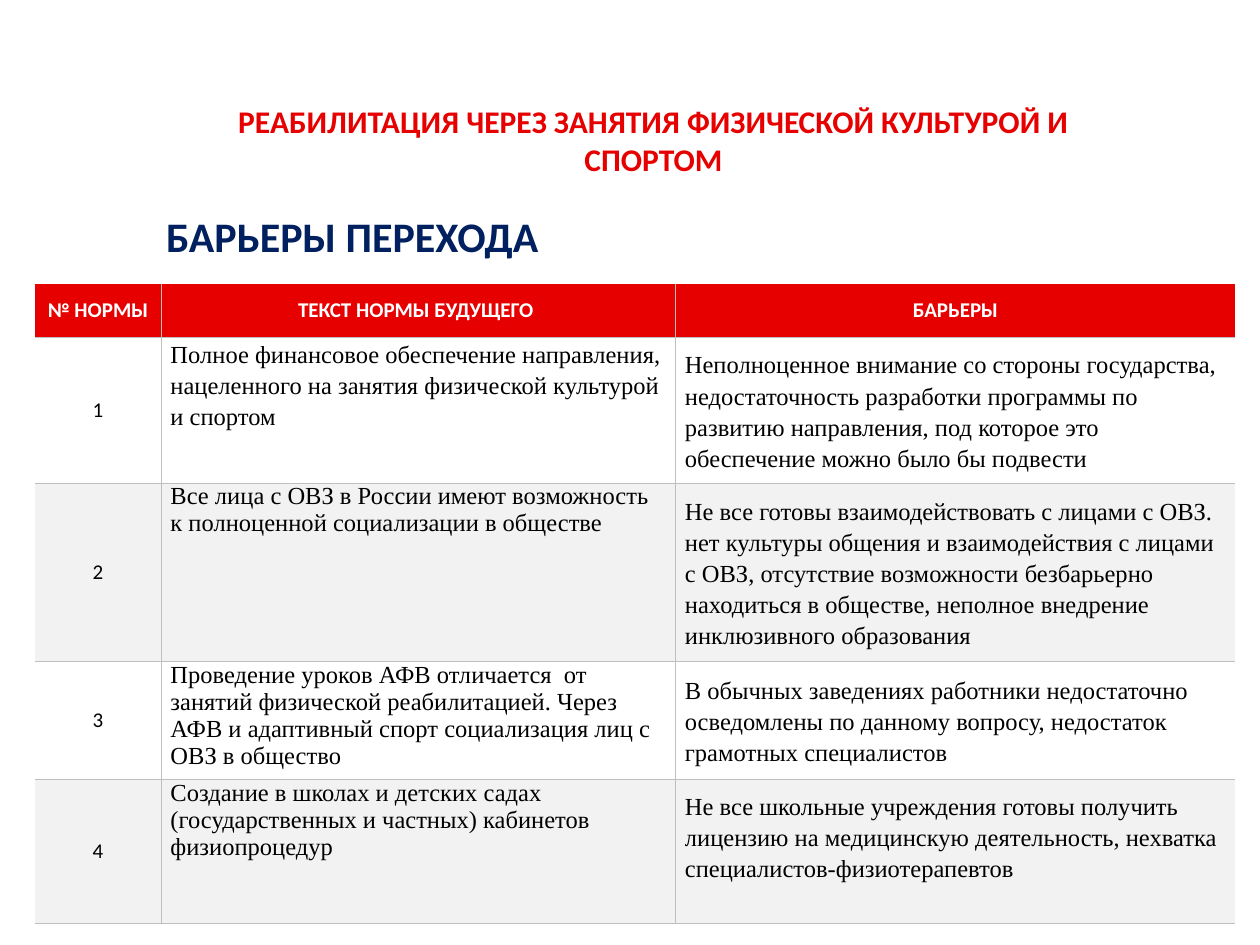
import pptx
import pptx.util
import pptx.dml.color
import pptx.enum.text
import pptx.oxml

Pt = pptx.util.Pt
Align = pptx.enum.text.PP_ALIGN
Anchor = pptx.enum.text.MSO_ANCHOR

RED = "E60000"
NAVY = "002060"
GRAY = "BFBFBF"
PALE = "F2F2F2"
WHITE = "FFFFFF"
BLACK = "000000"

HEAD = ["№ НОРМЫ", "ТЕКСТ НОРМЫ БУДУЩЕГО ", "БАРЬЕРЫ"]
NORMS = [
    ("Полное финансовое обеспечение направления, нацеленного на занятия "
     "физической культурой и спортом",
     "Неполноценное внимание со стороны государства, недостаточность "
     "разработки программы по развитию направления, под которое это "
     "обеспечение можно было бы подвести"),
    ("Все лица с ОВЗ в России имеют возможность к полноценной социализации "
     "в обществе",
     "Не все готовы взаимодействовать с лицами с ОВЗ. нет культуры общения "
     "и взаимодействия с лицами с ОВЗ, отсутствие возможности безбарьерно "
     "находиться в обществе, неполное внедрение инклюзивного образования"),
    ("Проведение уроков АФВ отличается  от занятий физической "
     "реабилитацией. Через АФВ и адаптивный спорт социализация лиц с ОВЗ "
     "в общество",
     "В обычных заведениях работники недостаточно осведомлены по данному "
     "вопросу, недостаток грамотных специалистов"),
    ("Создание в школах и детских садах (государственных и частных) "
     "кабинетов физиопроцедур",
     "Не все школьные учреждения готовы получить лицензию на медицинскую "
     "деятельность, нехватка специалистов-физиотерапевтов"),
]
WIDTHS = [72, 294, 320]
HEIGHTS = [31, 83, 101.5, 67.5, 82]

SANS = {"name": "Calibri", "size": Pt(12), "bold": False}
BOLD = {**SANS, "bold": True}
SERIF = {"name": "Times New Roman", "size": Pt(14), "bold": False}


def color(code):
    return pptx.dml.color.RGBColor.from_string(code)


def apply(item, form):
    for key, value in form.items():
        setattr(item, key, value)


def write(frame, text, font, ink, para):
    line = frame.paragraphs[0]
    apply(line, para)
    run = line.add_run()
    run.text = text
    apply(run.font, font)
    run.font.color.rgb = color(ink)


def add_text(slide, box, text, font, ink, para, form):
    frame = slide.shapes.add_textbox(*map(Pt, box)).text_frame
    apply(frame, form)
    write(frame, text, font, ink, para)


def add_edge(cell, side, shown):
    fill = (f'<a:solidFill><a:srgbClr val="{GRAY}"/></a:solidFill>'
            if shown else "<a:noFill/>")
    space = "http://schemas.openxmlformats.org/drawingml/2006/main"
    edge = pptx.oxml.parse_xml(
        f'<a:ln{side} xmlns:a="{space}" w="{Pt(0.5)}">{fill}</a:ln{side}>')
    cell._tc.get_or_add_tcPr().append(edge)


def fill_cell(cell, row, col, text):
    sides = {"L": col > 0, "R": col < len(WIDTHS) - 1, "T": row > 0, "B": True}
    for side, shown in sides.items():
        add_edge(cell, side, shown)
    shade = RED if row == 0 else PALE if row % 2 == 0 else None
    if shade:
        cell.fill.solid()
        cell.fill.fore_color.rgb = color(shade)
    else:
        cell.fill.background()

    norm = row > 0 and col == 1
    gap = Pt(0 if norm else 2.7)
    last = row == len(NORMS) and col == 2
    apply(cell, {
        "margin_left": Pt(5.4), "margin_right": Pt(5.4),
        "margin_top": gap, "margin_bottom": Pt(20) if last else gap,
        "vertical_anchor": Anchor.TOP if norm else Anchor.MIDDLE,
    })
    if row == 0:
        font, ink, para = BOLD, WHITE, {"alignment": Align.CENTER}
    elif col == 0:
        font, ink, para = SANS, BLACK, {"alignment": Align.CENTER}
    else:
        loose = col == 2 or row == 1
        font, ink, para = SERIF, BLACK, {"line_spacing": 1.15 if loose else 1.0}
    write(cell.text_frame, text, font, ink, para)


def add_grid(slide, left, top):
    rows = [HEAD] + [[str(num), *norm] for num, norm in enumerate(NORMS, 1)]
    size = (left, top, sum(WIDTHS), sum(HEIGHTS))
    table = slide.shapes.add_table(
        len(rows), len(WIDTHS), *map(Pt, size)).table
    apply(table, {"first_row": False, "horz_banding": False})
    for col, width in zip(table.columns, WIDTHS):
        col.width = Pt(width)
    for row, height in zip(table.rows, HEIGHTS):
        row.height = Pt(height)
    for row, texts in enumerate(rows):
        for col, text in enumerate(texts):
            fill_cell(table.cell(row, col), row, col, text)


def main():
    deck = pptx.Presentation()
    apply(deck, {"slide_width": Pt(720), "slide_height": Pt(540)})
    slide = deck.slides.add_slide(deck.slide_layouts[6])
    add_text(slide, (87.8, 116.6, 229.7, 36), "БАРЬЕРЫ ПЕРЕХОДА",
             {**BOLD, "size": Pt(24)}, NAVY, {}, {"word_wrap": False})
    add_grid(slide, 20, 162)
    add_text(slide, (116, 66.2, 514.8, 28),
             "РЕАБИЛИТАЦИЯ ЧЕРЕЗ ЗАНЯТИЯ ФИЗИЧЕСКОЙ КУЛЬТУРОЙ И СПОРТОМ",
             {**BOLD, "size": Pt(18)}, RED, {"alignment": Align.CENTER},
             {"word_wrap": True, "vertical_anchor": Anchor.MIDDLE})
    deck.save("out.pptx")


if __name__ == "__main__":
    main()
